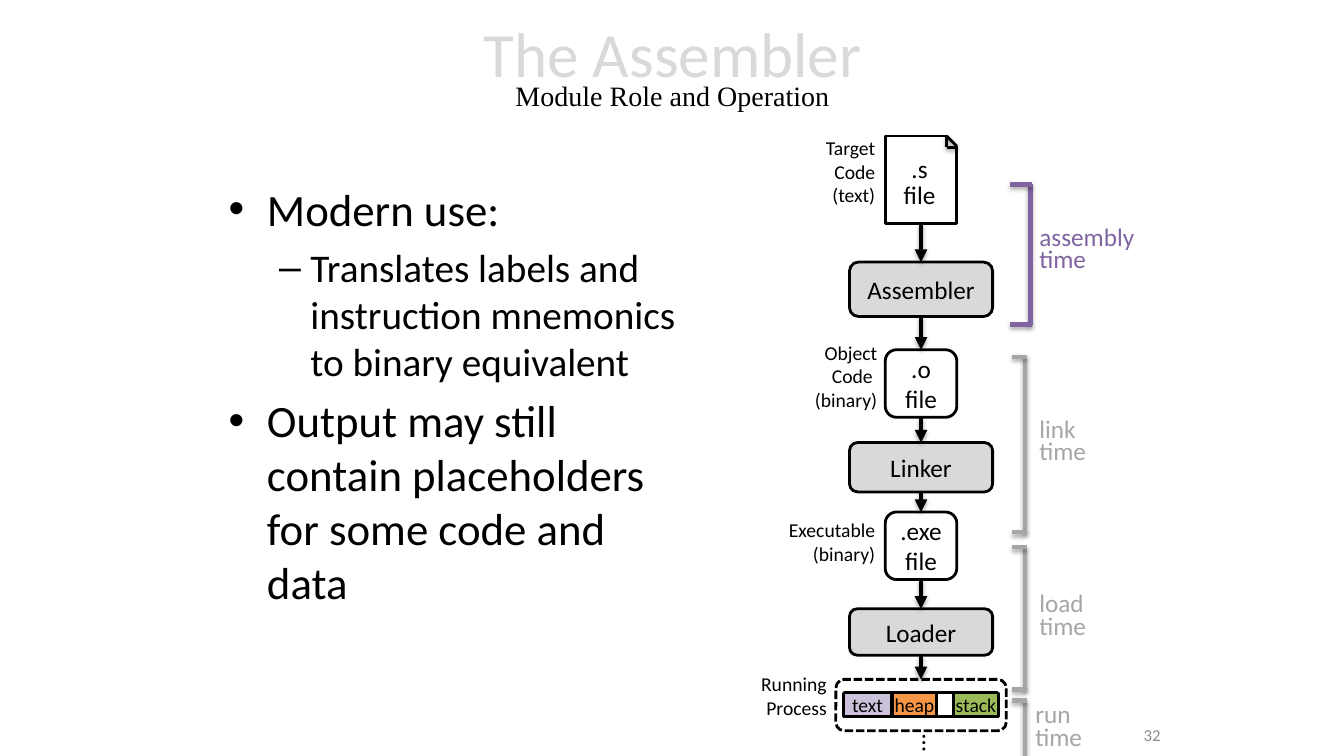
from dataclasses import dataclass

from lxml.etree import SubElement
from pptx import Presentation
from pptx.dml.color import RGBColor
from pptx.enum.dml import MSO_LINE
from pptx.enum.shapes import MSO_CONNECTOR, MSO_SHAPE
from pptx.enum.text import MSO_ANCHOR, MSO_AUTO_SIZE, PP_ALIGN
from pptx.oxml.ns import qn
from pptx.util import Inches, Pt

CELL = Inches(0.1)
COLUMNS, ROWS = 133.3, 75


@dataclass(frozen=True)
class Theme:
    """Colours, fonts and type sizes of the slide."""
    ink: str = "000000"
    paper: str = "FFFFFF"
    faded: str = "D9D9D9"
    waiting: str = "A6A6A6"
    active: str = "8064A2"
    number: str = "8C8C8C"
    stack: str = "9BBB59"
    text: str = "CCC1DA"
    heap: str = "F79646"
    body_font: str = "Calibri"
    subtitle_font: str = "Times New Roman"
    title_size: int = 45
    subtitle_size: int = 20
    point_size: int = 32
    detail_size: int = 28
    stage_size: int = 18
    label_size: int = 14
    number_size: int = 12
    outline: int = 2
    stroke: int = 3


THEME = Theme()


@dataclass(frozen=True)
class Box:
    """An area measured in grid columns and rows."""
    left: float
    top: float
    width: float
    height: float

    def area(self, left, top, width, height):
        """Return an area placed relative to this one."""
        return Box(self.left + left, self.top + top, width, height)

    def emu(self):
        """Return left, top, width and height as lengths."""
        return [round(n * CELL) for n in (self.left, self.top, self.width, self.height)]


def style_run(run, size, color=THEME.ink, font=THEME.body_font):
    """Set the typeface, size and colour of a run."""
    run.font.name, run.font.size = font, Pt(size)
    run.font.color.rgb = RGBColor.from_string(color)


def write(shape, lines, size=THEME.stage_size, color=THEME.ink, align=PP_ALIGN.LEFT,
          anchor=MSO_ANCHOR.TOP, spacing=None, wrap=True):
    """Fill a shape with one paragraph per line and return the paragraphs."""
    frame = shape.text_frame
    frame.word_wrap, frame.vertical_anchor = wrap, anchor
    if not wrap:
        frame.auto_size = MSO_AUTO_SIZE.SHAPE_TO_FIT_TEXT
    frame.text = "\n".join(lines)
    for paragraph in frame.paragraphs:
        paragraph.alignment = align
        if spacing:
            paragraph.line_spacing = spacing
        for run in paragraph.runs:
            style_run(run, size, color)
    return frame.paragraphs


def add_text(slide, box, lines, **fmt):
    """Add a text box and return it with its paragraphs."""
    holder = slide.shapes.add_textbox(*box.emu())
    return holder, write(holder, lines, **fmt)


def add_block(slide, box, fill, preset=MSO_SHAPE.RECTANGLE, outlined=True):
    """Add a flat filled shape with an optional outline."""
    block = slide.shapes.add_shape(preset, *box.emu())
    block.shadow.inherit = False
    block.fill.solid()
    block.fill.fore_color.rgb = RGBColor.from_string(fill)
    if outlined:
        block.line.color.rgb = RGBColor.from_string(THEME.ink)
        block.line.width = Pt(THEME.outline)
    else:
        block.line.fill.background()
    return block


def add_line(slide, box, x1, y1, x2, y2, color=THEME.ink, width=THEME.stroke, arrow=False):
    """Draw a softly shadowed line between two points of a box."""
    ends = (box.left + x1, box.top + y1, box.left + x2, box.top + y2)
    line = slide.shapes.add_connector(MSO_CONNECTOR.STRAIGHT, *(round(n * CELL) for n in ends))
    line.line.color.rgb = RGBColor.from_string(color)
    line.line.width = Pt(width)
    properties = line._element.spPr
    if arrow:
        SubElement(properties.find(qn("a:ln")), qn("a:tailEnd"), type="triangle")
    effects = SubElement(properties, qn("a:effectLst"))
    shadow = SubElement(effects, qn("a:outerShdw"), blurRad=str(Pt(3.1)), dist=str(Pt(1.8)),
                        dir="5400000", rotWithShape="0")
    tint = SubElement(shadow, qn("a:srgbClr"), val=THEME.ink)
    SubElement(tint, qn("a:alpha"), val="35000")
    return line


def draw_title(slide, box):
    """Write the title with its subtitle on the next line."""
    _, (heading,) = add_text(slide, box, ["The Assembler"], size=THEME.title_size,
                             color=THEME.faded, align=PP_ALIGN.CENTER,
                             anchor=MSO_ANCHOR.MIDDLE, spacing=0.7)
    heading.add_line_break()
    subtitle = heading.add_run()
    subtitle.text = "Module Role and Operation"
    style_run(subtitle, THEME.subtitle_size, font=THEME.subtitle_font)


def draw_points(slide, box):
    """Write the bulleted points."""
    points = (("Modern use:", 0),
              ("Translates labels and instruction mnemonics to binary equivalent", 1),
              ("Output may still contain placeholders for some code and data", 0))
    levels = ((THEME.point_size, 0.38, 0.38, "•"), (THEME.detail_size, 0.81, 0.31, "–"))
    _, paragraphs = add_text(slide, box, [point for point, _ in points])
    for paragraph, (_, level) in zip(paragraphs, points):
        size, margin, hang, bullet = levels[level]
        style_run(paragraph.runs[0], size)
        paragraph.level = level
        paragraph.space_before = Pt(size * 0.2)
        properties = paragraph._p.get_or_add_pPr()
        properties.set("marL", str(Inches(margin)))
        properties.set("indent", str(-Inches(hang)))
        SubElement(properties, qn("a:buFont"), typeface="Arial")
        SubElement(properties, qn("a:buChar"), char=bullet)


def draw_source_file(slide, box):
    """Draw the page with a folded corner and return its outline."""
    page = add_block(slide, box, THEME.paper)
    fold, edge = 1, box.width
    add_block(slide, box.area(edge - 0.9, -0.1, 1, 1.1), THEME.paper, outlined=False)
    for ends in ((edge - fold, 0, edge - fold, 1.1), (edge, 1.1, edge - fold, 1.1),
                 (edge - fold, 0, edge, fold)):
        add_line(slide, box, *ends, width=THEME.outline)
    add_text(slide, box.area(0.8, 1.6, 5.2, 6.3), [".s", "file"], align=PP_ALIGN.CENTER,
             spacing=Pt(18.6), wrap=False)
    return page


def draw_process(slide, box):
    """Draw the running process with its memory areas and return its frame."""
    frame = add_block(slide, box, THEME.paper, MSO_SHAPE.ROUNDED_RECTANGLE)
    frame.line.dash_style = MSO_LINE.SQUARE_DOT
    add_block(slide, box.area(0.8, 1.3, 15.2, 2.4), THEME.paper)
    for name, left, width, fill in (("stack", 11.7, 4.4, THEME.stack),
                                    ("text", 0.8, 4.7, THEME.text),
                                    ("heap", 5.6, 4.4, THEME.heap)):
        segment = add_block(slide, box.area(left, 1.35, width, 2.3), fill)
        segment.text_frame.margin_left = segment.text_frame.margin_right = 0
        write(segment, [name], size=THEME.label_size, align=PP_ALIGN.CENTER,
              anchor=MSO_ANCHOR.MIDDLE)
    return frame


def draw_pipeline(slide, box):
    """Draw the stages from source file to process, joined by arrows."""
    def centred(top, width, height):
        return box.area((box.width - width) / 2, top, width, height)

    tool, artifact = (14.2, THEME.faded), (7.1, THEME.paper)
    stages = [draw_source_file(slide, centred(0.5, 7.1, 8.7))]
    for lines, top, height, (width, fill) in (
            (["Assembler"], 13, 5.4, tool), ([".o", "file"], 21.7, 6.7, artifact),
            (["Linker"], 30.9, 4.9, tool), ([".exe", "file"], 37.8, 6.7, artifact),
            (["Loader"], 47.4, 4.6, tool)):
        stage = add_block(slide, centred(top, width, height), fill, MSO_SHAPE.ROUNDED_RECTANGLE)
        write(stage, lines, align=PP_ALIGN.CENTER, anchor=MSO_ANCHOR.MIDDLE)
        stages.append(stage)
    stages.append(draw_process(slide, centred(54.4, 16.9, 5.1)))
    for upper, lower in zip(stages, stages[1:]):
        arrow = add_line(slide, box, 0, 0, 0, 1, arrow=True)
        arrow.begin_connect(upper, 2)
        arrow.end_connect(lower, 0)
    for lines, right, top, width in (
            (["Target", "Code", "(text)"], 13.4, 0, 7),
            (["Object", "Code ", "(binary)"], 13.6, 20.3, 8.3),
            (["Executable", "(binary)"], 13.4, 37.9, 10.7),
            (["Running", "Process"], 8.6, 53.2, 8.6)):
        add_text(slide, box.area(right - width, top, width, 2.4 * len(lines) + 0.9), lines,
                 size=THEME.label_size, align=PP_ALIGN.RIGHT, wrap=False)
    dots, _ = add_text(slide, box.area(16.2, 58.8, 3.8, 4), ["…"], wrap=False)
    dots.rotation = 90


def draw_phases(slide, box):
    """Draw a bracket and a label for each phase of the build."""
    for name, spine, tick, top, bottom, closed, label, width, color in (
            ("assembly", 2.2, 2, 0, 13.9, True, (2.1, 3.9), 12.1, THEME.active),
            ("link", 1.7, 1.3, 17.1, 34.5, True, (2.1, 23), 6.7, THEME.waiting),
            ("load", 1.7, 1.3, 36, 50.1, True, (2.1, 40.3), 7.1, THEME.waiting),
            ("run", 1.7, 1.3, 51.2, box.height, False, (1.7, 51.3), 6.7, THEME.waiting)):
        add_line(slide, box, spine, top, spine, bottom, color)
        for level in (top, bottom) if closed else (top,):
            add_line(slide, box, spine + 0.15, level, spine - tick, level, color)
        add_text(slide, box.area(*label, width, 5.6), [name, "time"], color=color,
                 spacing=Pt(16), wrap=False)


def draw_page_number(slide, box):
    """Write the slide's number."""
    add_text(slide, box, ["32"], size=THEME.number_size, color=THEME.number,
             align=PP_ALIGN.RIGHT, anchor=MSO_ANCHOR.MIDDLE)


def main():
    """Build the slide and save it."""
    deck = Presentation()
    deck.slide_width, deck.slide_height = round(COLUMNS * CELL), ROWS * CELL
    slide = deck.slides.add_slide(deck.slide_layouts[6])
    draw_points(slide, Box(21.7, 17.5, 48.3, 49.5))
    draw_page_number(slide, Box(92.8, 70.9, 23.3, 4))
    draw_pipeline(slide, Box(74.4, 13, 33.9, 62))
    draw_title(slide, Box(16.7, 0, 100, 14.5))
    draw_phases(slide, Box(100, 18.3, 15, 56.7))
    deck.save("out.pptx")


if __name__ == "__main__":
    main()
